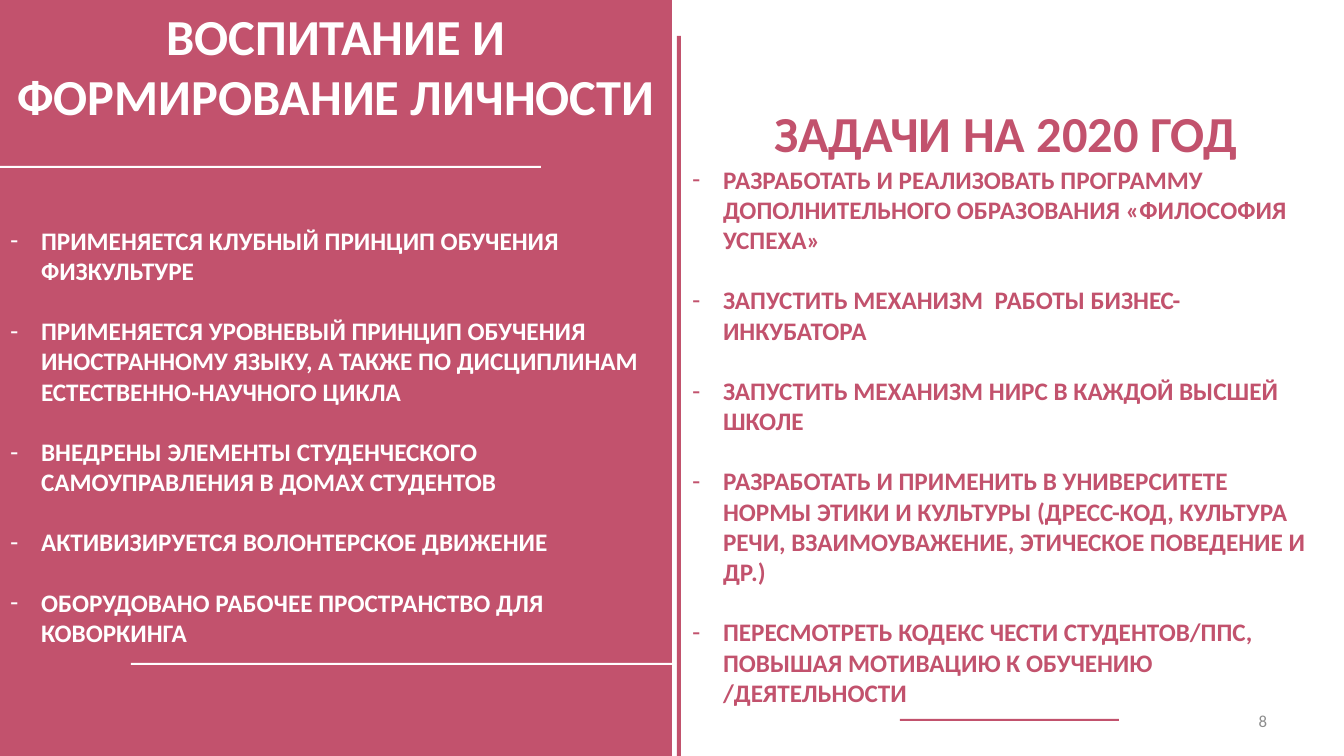
"""Build the slide on personal development and the tasks for 2020."""
import lxml.etree
import pptx
import pptx.dml.color
import pptx.enum.shapes
import pptx.enum.text
import pptx.oxml.ns
import pptx.util

ROSE, WHITE, GREY = "C2526D", "FFFFFF", "8C8C8C"
PX = 914400 / 100.8
INDENT, ITEM_GAP = 31, 30
ALIGN = pptx.enum.text.PP_ALIGN
ANCHOR = pptx.enum.text.MSO_ANCHOR

TITLE = "ВОСПИТАНИЕ И ФОРМИРОВАНИЕ ЛИЧНОСТИ"
TASKS_TITLE = "ЗАДАЧИ НА 2020 ГОД"
RESULTS = [
    "ПРИМЕНЯЕТСЯ КЛУБНЫЙ ПРИНЦИП ОБУЧЕНИЯ ФИЗКУЛЬТУРЕ",
    "ПРИМЕНЯЕТСЯ УРОВНЕВЫЙ ПРИНЦИП ОБУЧЕНИЯ ИНОСТРАННОМУ ЯЗЫКУ, "
    "А ТАКЖЕ ПО ДИСЦИПЛИНАМ ЕСТЕСТВЕННО-НАУЧНОГО ЦИКЛА",
    "ВНЕДРЕНЫ ЭЛЕМЕНТЫ СТУДЕНЧЕСКОГО САМОУПРАВЛЕНИЯ В ДОМАХ СТУДЕНТОВ",
    "АКТИВИЗИРУЕТСЯ ВОЛОНТЕРСКОЕ ДВИЖЕНИЕ",
    "ОБОРУДОВАНО РАБОЧЕЕ ПРОСТРАНСТВО ДЛЯ КОВОРКИНГА",
]
TASKS = [
    "РАЗРАБОТАТЬ И РЕАЛИЗОВАТЬ ПРОГРАММУ ДОПОЛНИТЕЛЬНОГО ОБРАЗОВАНИЯ «ФИЛОСОФИЯ УСПЕХА»",
    "ЗАПУСТИТЬ МЕХАНИЗМ  РАБОТЫ БИЗНЕС-ИНКУБАТОРА",
    "ЗАПУСТИТЬ МЕХАНИЗМ НИРС В КАЖДОЙ ВЫСШЕЙ ШКОЛЕ",
    "РАЗРАБОТАТЬ И ПРИМЕНИТЬ В УНИВЕРСИТЕТЕ НОРМЫ ЭТИКИ И КУЛЬТУРЫ "
    "(ДРЕСС-КОД, КУЛЬТУРА РЕЧИ, ВЗАИМОУВАЖЕНИЕ, ЭТИЧЕСКОЕ ПОВЕДЕНИЕ И ДР.)",
    "ПЕРЕСМОТРЕТЬ КОДЕКС ЧЕСТИ СТУДЕНТОВ/ППС, ПОВЫШАЯ МОТИВАЦИЮ К ОБУЧЕНИЮ /ДЕЯТЕЛЬНОСТИ",
]
BLOCKS = [
    ((0, 0, 672, 756), ROSE),
    ((677, 36, 4, 720), ROSE),
    ((0, 166, 541, 2), WHITE),
    ((131, 663, 541, 2), WHITE),
    ((900, 719, 219, 2), ROSE),
]


def px(length):
    return pptx.util.Emu(round(length * PX))


def rgb(color):
    return pptx.dml.color.RGBColor.from_string(color)


def add_block(slide, box, color, depth):
    shape = slide.shapes.add_shape(
        pptx.enum.shapes.MSO_SHAPE.RECTANGLE, *map(px, box))
    shape.shadow.inherit = False
    shape.fill.solid()
    shape.fill.fore_color.rgb = rgb(color)
    shape.line.fill.background()
    shape.element.getparent().insert(2 + depth, shape.element)


def write(shape, box, lines, size, color, align, bold=True, anchor=ANCHOR.TOP):
    shape.left, shape.top, shape.width, shape.height = map(px, box)
    frame = shape.text_frame
    frame.text = "\n".join(lines)
    frame.word_wrap = True
    frame.auto_size = pptx.enum.text.MSO_AUTO_SIZE.NONE
    frame.vertical_anchor = anchor
    for paragraph in frame.paragraphs:
        paragraph.alignment = align
        paragraph.space_before = pptx.util.Pt(0)
        font = paragraph.font
        font.name, font.size, font.bold = "Calibri", pptx.util.Pt(size), bold
        font.color.rgb = rgb(color)


def write_list(shape, box, items, color):
    write(shape, box, items, 18, color, ALIGN.LEFT)
    for paragraph in shape.text_frame.paragraphs:
        paragraph.space_after = px(ITEM_GAP)
        properties = paragraph._p.get_or_add_pPr()
        properties.set("marL", str(px(INDENT)))
        properties.set("indent", str(-px(INDENT)))
        bullet = lxml.etree.Element(pptx.oxml.ns.qn("a:buChar"), char="-")
        properties.find(pptx.oxml.ns.qn("a:defRPr")).addprevious(bullet)


def main():
    presentation = pptx.Presentation()
    presentation.slide_width, presentation.slide_height = px(1344), px(756)
    slide = presentation.slides.add_slide(presentation.slide_layouts[3])
    title, results, tasks = slide.placeholders
    for depth, (box, color) in enumerate(BLOCKS):
        add_block(slide, box, color, depth)
    write(title, (-2, 0, 676, 132), [TITLE], 36, WHITE, ALIGN.CENTER)
    write_list(results, (0, 220, 675, 437), RESULTS, WHITE)
    write_list(tasks, (682, 159, 648, 559), TASKS, ROSE)
    heading, number = (slide.shapes.add_textbox(0, 0, 0, 0) for _ in range(2))
    write(heading, (668, 97, 676, 72), [TASKS_TITLE], 36, ROSE, ALIGN.CENTER)
    write(number, (964, 701, 313, 40), ["8"], 12, GREY, ALIGN.RIGHT,
          bold=False, anchor=ANCHOR.MIDDLE)
    presentation.save("out.pptx")


if __name__ == "__main__":
    main()
